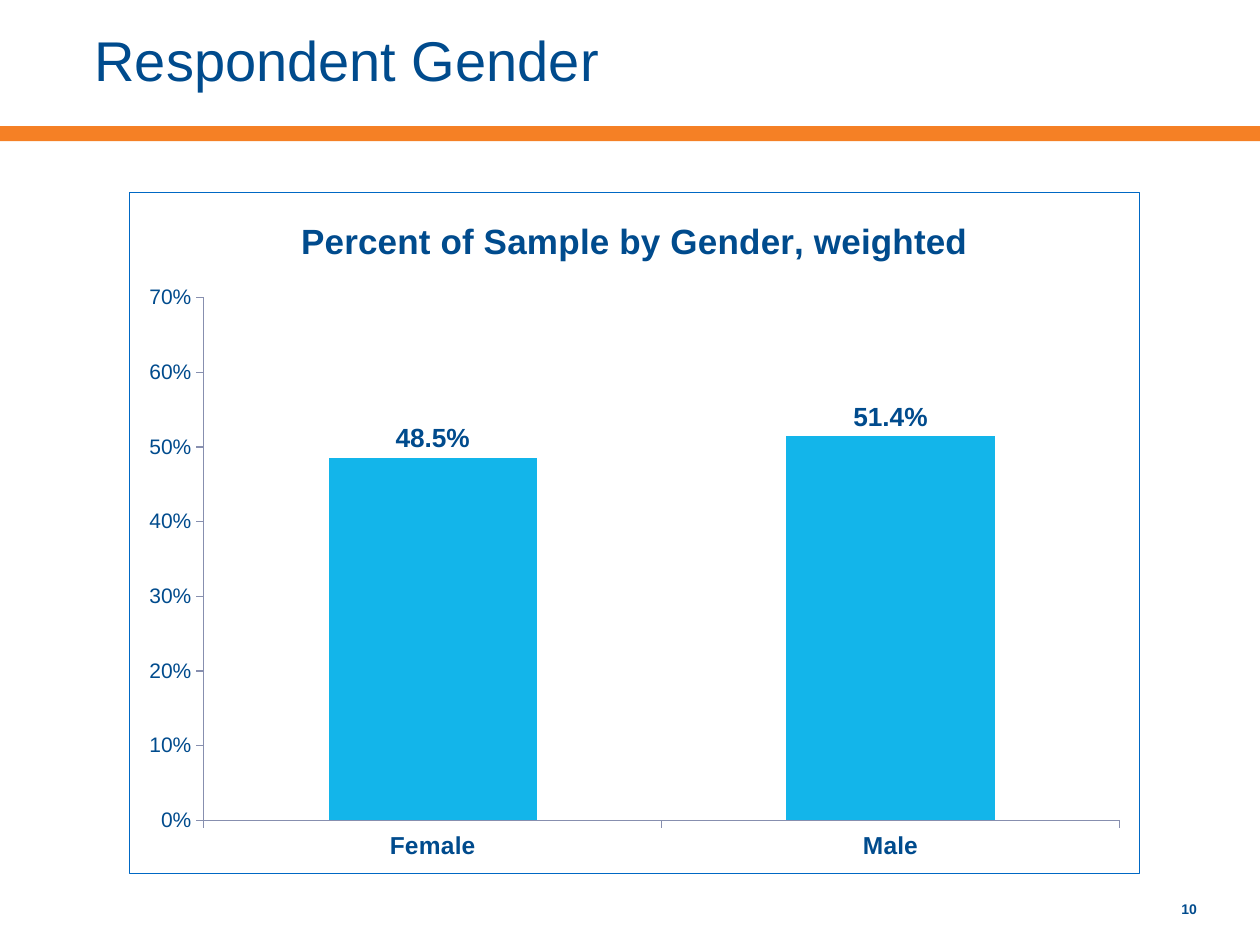
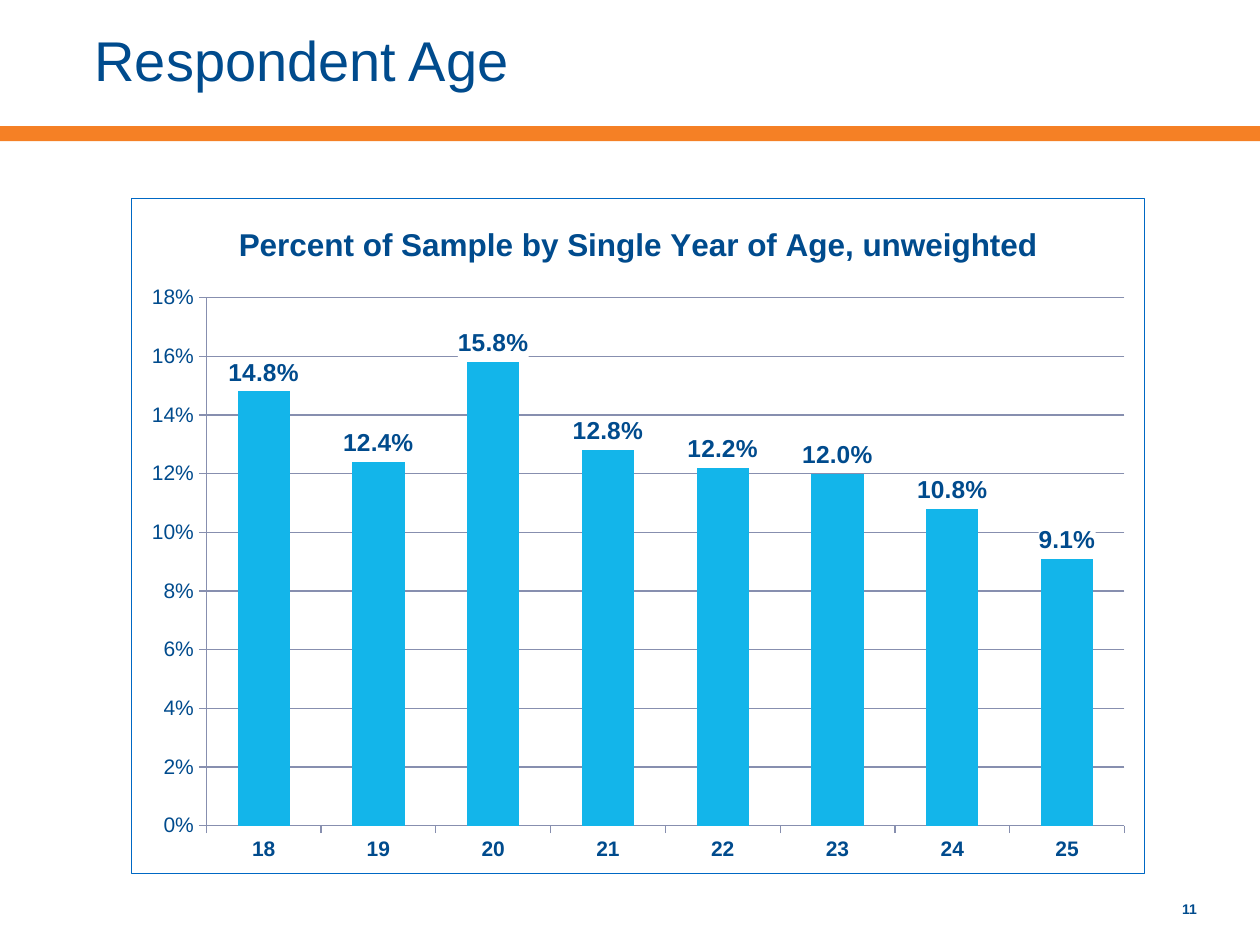
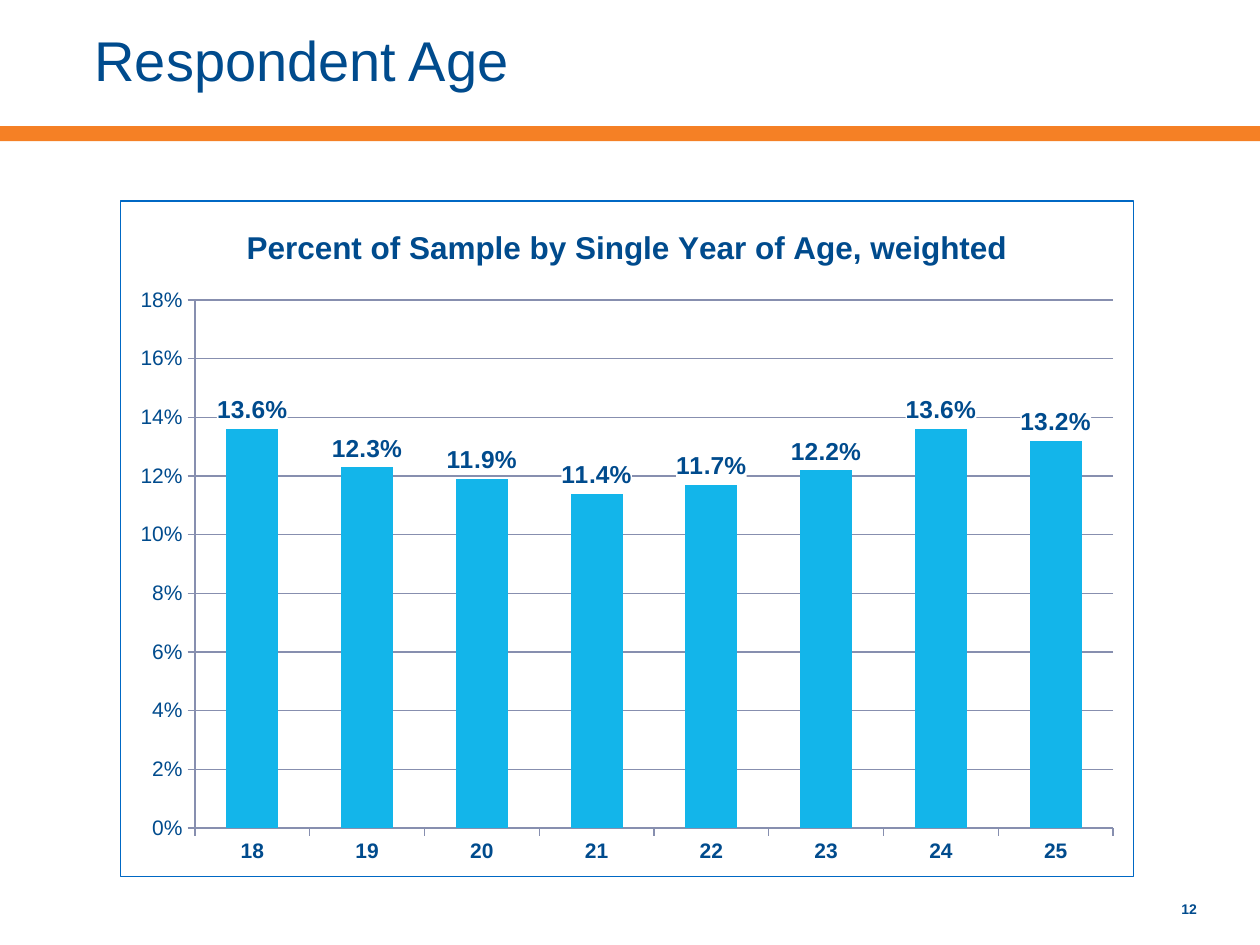
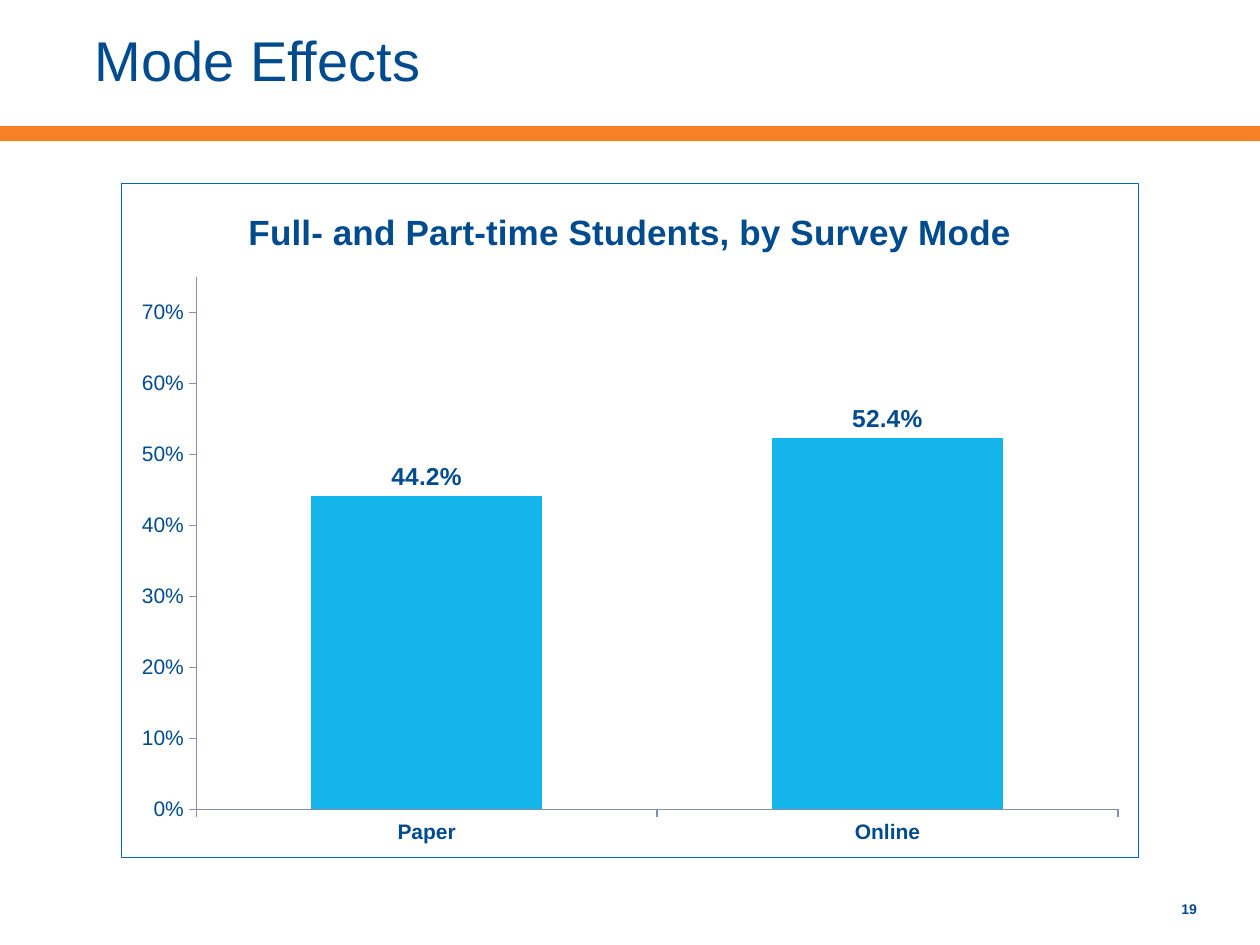
from dataclasses import dataclass
from typing import Optional

from lxml.etree import fromstring
from pptx import Presentation
from pptx.chart.chart import Chart
from pptx.chart.data import CategoryChartData
from pptx.dml.color import RGBColor
from pptx.enum.chart import XL_CHART_TYPE, XL_LABEL_POSITION, XL_TICK_MARK
from pptx.enum.shapes import MSO_SHAPE
from pptx.enum.text import MSO_ANCHOR, MSO_AUTO_SIZE, PP_ALIGN
from pptx.oxml.ns import nsdecls, qn
from pptx.slide import Slide, SlideLayout
from pptx.util import Inches, Pt

FONT = "Arial"
COLORS = {
    "text": "004B8D",
    "band": "F58025",
    "bar": "13B5EA",
    "border": "0068C4",
    "axis": "878FAF",
    "white": "FFFFFF",
}
AGES = ("18", "19", "20", "21", "22", "23", "24", "25")


@dataclass(frozen=True)
class ChartSlide:
    """One slide: its title, page number and column chart."""

    title: str
    page: int
    chart_title: str
    box: tuple[float, float, float, float]
    cats: tuple[str, ...]
    vals: tuple[float, ...]
    title_size: int = 18
    cat_size: int = 12
    label_size: int = 14
    label_format: str = "0.0%"
    gap: int = 120
    maximum: Optional[float] = None
    grid: bool = False


SLIDES = (
    ChartSlide("Respondent Gender", 10, "Percent of Sample by Gender, weighted",
               (1.02, 1.52, 8.03, 5.42), ("Female", "Male"), (0.485, 0.514),
               title_size=20, cat_size=14, label_size=15, maximum=0.7),
    ChartSlide("Respondent Age", 11, "Percent of Sample by Single Year of Age, unweighted",
               (1.04, 1.57, 8.05, 5.37), AGES,
               (0.148, 0.124, 0.158, 0.128, 0.122, 0.12, 0.108, 0.091), grid=True),
    ChartSlide("Respondent Age", 12, "Percent of Sample by Single Year of Age, weighted",
               (0.95, 1.59, 8.05, 5.37), AGES,
               (0.136, 0.123, 0.119, 0.114, 0.117, 0.122, 0.136, 0.132),
               maximum=0.18, grid=True),
    ChartSlide("Mode Effects", 19, "Full- and Part-time Students, by Survey Mode",
               (0.96, 1.45, 8.08, 5.36), ("Paper", "Online"), (0.442, 0.524),
               title_size=20, label_format="####.0%", gap=100, maximum=0.75),
)


def rgb(name: str) -> RGBColor:
    """Return a palette colour."""
    return RGBColor.from_string(COLORS[name])


def style_font(font, size: float, bold: bool = False) -> None:
    """Apply the shared typeface and colour at the given size."""
    font.name = FONT
    font.size = Pt(size)
    font.bold = bold
    font.color.rgb = rgb("text")


def write_line(tf, text: str, size: float, bold: bool, align: PP_ALIGN) -> None:
    """Write one styled run into the first paragraph."""
    p = tf.paragraphs[0]
    p.alignment = align
    r = p.add_run()
    r.text = text
    style_font(r.font, size, bold)


def add_title(s: Slide, text: str) -> None:
    """Place and fill the title placeholder."""
    sp = s.shapes.title
    sp.left, sp.top, sp.width, sp.height = map(Inches, (0.75, 0, 8.75, 1))
    tf = sp.text_frame
    tf.margin_left = 0
    tf.vertical_anchor = MSO_ANCHOR.MIDDLE
    tf.auto_size = MSO_AUTO_SIZE.NONE
    tf.paragraphs[0].line_spacing = 0.9
    write_line(tf, text, 32, False, PP_ALIGN.LEFT)


def add_page_number(s: Slide, page: int) -> None:
    """Write the page number at the lower right."""
    tf = s.shapes.add_textbox(Inches(7.17), Inches(7.1), Inches(2.33), Inches(0.4)).text_frame
    tf.word_wrap = True
    tf.margin_right = 0
    write_line(tf, str(page), 8, True, PP_ALIGN.RIGHT)


def add_band(s: Slide, layout: SlideLayout) -> None:
    """Draw the band and hand it to the layout that all slides share."""
    sp = s.shapes.add_shape(MSO_SHAPE.RECTANGLE, 0, Inches(1), Inches(10), Inches(0.12))
    sp.shadow.inherit = False
    sp.fill.solid()
    sp.fill.fore_color.rgb = rgb("band")
    sp.line.fill.background()
    layout.shapes.element.append(sp.element)


def add_border(chart: Chart) -> None:
    """Outline the chart area."""
    chart.element.find(qn("c:chart")).addnext(fromstring(
        f'<c:spPr {nsdecls("c", "a")}><a:noFill/><a:ln w="{Pt(0.75)}"><a:solidFill>'
        f'<a:srgbClr val="{COLORS["border"]}"/></a:solidFill></a:ln></c:spPr>'))


def style_axes(chart: Chart, data: ChartSlide) -> None:
    """Format both axes and the optional gridlines."""
    cat, val = chart.category_axis, chart.value_axis
    for axis, size, bold in ((cat, data.cat_size, True), (val, 12, False)):
        axis.major_tick_mark = XL_TICK_MARK.OUTSIDE
        axis.minor_tick_mark = XL_TICK_MARK.NONE
        axis.format.line.color.rgb = rgb("axis")
        axis.format.line.width = Pt(0.75)
        style_font(axis.tick_labels.font, size, bold)
    val.tick_labels.number_format = "0%"
    val.tick_labels.number_format_is_linked = False
    val.has_major_gridlines = data.grid
    if data.grid:
        val.major_gridlines.format.line.color.rgb = rgb("axis")
        val.major_gridlines.format.line.width = Pt(0.75)
    if data.maximum is not None:
        val.minimum_scale = 0
        val.maximum_scale = data.maximum


def style_columns(chart: Chart, data: ChartSlide) -> None:
    """Colour the columns and label their values."""
    plot = chart.plots[0]
    plot.gap_width = data.gap
    plot.vary_by_categories = False
    series = plot.series[0]
    series.invert_if_negative = False
    series.format.fill.solid()
    series.format.fill.fore_color.rgb = rgb("bar")
    labels = series.data_labels
    labels.show_value = True
    labels.position = XL_LABEL_POSITION.OUTSIDE_END
    labels.number_format = data.label_format
    labels.number_format_is_linked = False
    style_font(labels.font, data.label_size, True)
    if data.grid:
        label_format = chart.element.find(f'.//{qn("c:dLbls")}/{qn("c:numFmt")}')
        label_format.addnext(fromstring(
            f'<c:spPr {nsdecls("c", "a")}><a:solidFill>'
            f'<a:srgbClr val="{COLORS["white"]}"/></a:solidFill></c:spPr>'))


def add_column_chart(s: Slide, data: ChartSlide) -> None:
    """Add the bordered column chart."""
    chart_data = CategoryChartData(number_format="0.0%")
    chart_data.categories = data.cats
    chart_data.add_series("Series 1", data.vals)
    chart = s.shapes.add_chart(
        XL_CHART_TYPE.COLUMN_CLUSTERED, *map(Inches, data.box), chart_data).chart
    style_font(chart.font, 10)
    chart.has_legend = False
    chart.has_title = True
    write_line(chart.chart_title.text_frame, data.chart_title,
               data.title_size, True, PP_ALIGN.CENTER)
    style_axes(chart, data)
    style_columns(chart, data)
    add_border(chart)


def main() -> None:
    """Build and save the presentation."""
    prs = Presentation()
    prs.slide_width, prs.slide_height = Inches(10), Inches(7.5)
    layout = prs.slide_layouts.get_by_name("Title Only")
    for ph in list(layout.placeholders)[1:]:
        layout.shapes.element.remove(ph.element)
    for i, data in enumerate(SLIDES):
        s = prs.slides.add_slide(layout)
        if i == 0:
            add_band(s, layout)
        add_title(s, data.title)
        add_page_number(s, data.page)
        add_column_chart(s, data)
    prs.save("out.pptx")


if __name__ == "__main__":
    main()
